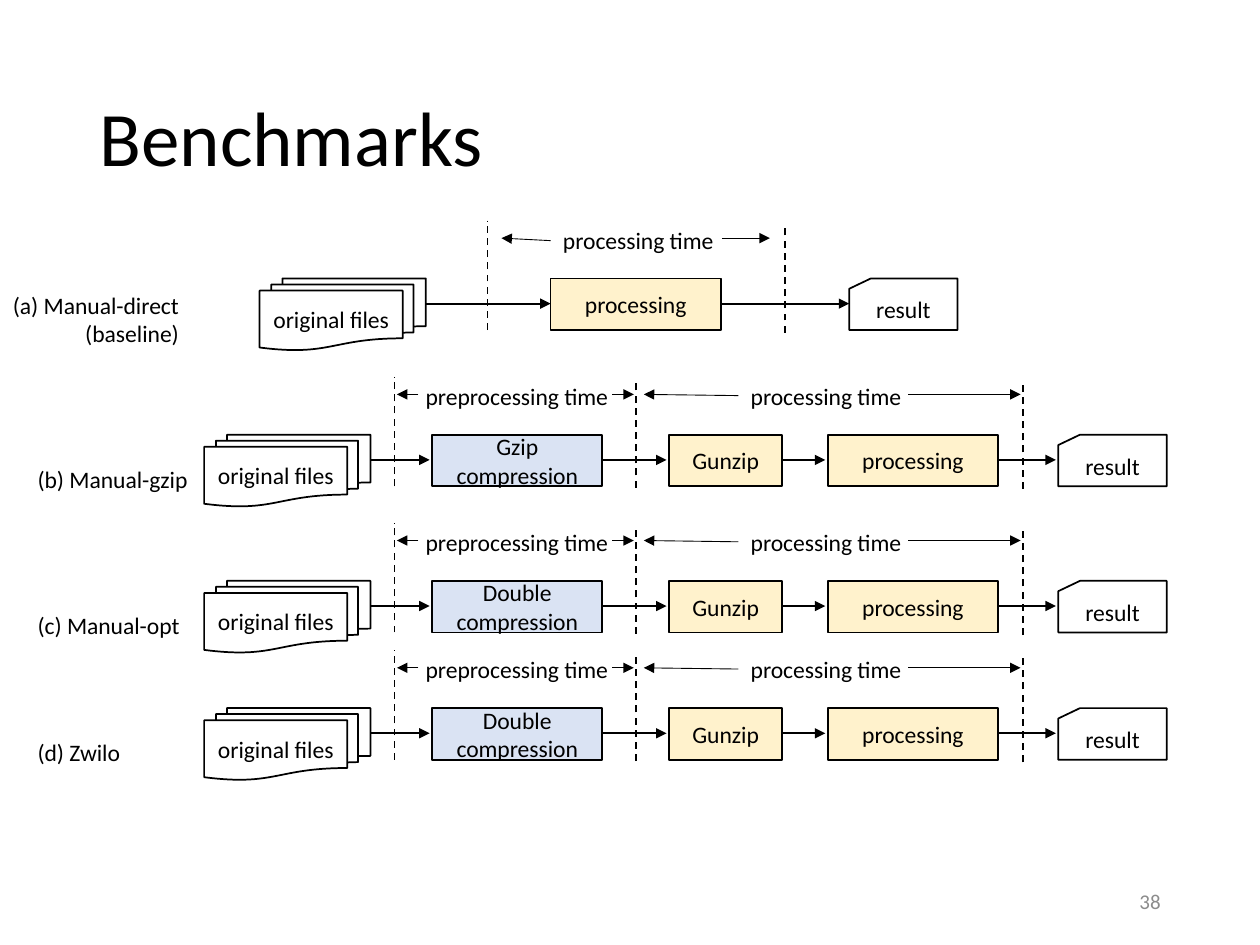
from dataclasses import dataclass

from lxml import etree
from pptx import Presentation
from pptx import util as u
from pptx.dml import color
from pptx.enum import dml, shapes, text
from pptx.oxml import ns

BLACK, WHITE, CREAM, SKY, GREY = "000000", "FFFFFF", "FFF2CC", "DAE3F3", "8C8C8C"
KIND = shapes.MSO_SHAPE
ALIGN = text.PP_ALIGN
MIDDLE = text.MSO_ANCHOR.MIDDLE


@dataclass
class Step:
    kind: KIND
    left: float
    width: float
    label: str
    fill: str = WHITE
    height: float = 0.41


@dataclass
class Span:
    label: str
    label_left: float
    left_arrow: tuple[float, float]
    right_arrow: tuple[float, float]
    slant: float = 0.0


@dataclass
class Border:
    x: float
    rise: float
    drop: float


@dataclass
class Pipeline:
    top: float
    steps: list[Step]
    flows: list[tuple[float, float]]
    spans: list[Span]
    borders: list[Border]


def rgb(value: str) -> color.RGBColor:
    return color.RGBColor.from_string(value)


def apply(target, formats: dict) -> None:
    for key, value in formats.items():
        setattr(target, key, value)


def write(frame, words: str, align=ALIGN.LEFT, size=13.5, ink=BLACK, **frame_formats) -> None:
    apply(frame, {"word_wrap": True, **frame_formats})
    frame.text = words
    for paragraph in frame.paragraphs:
        paragraph.alignment = align
        apply(paragraph.font, {"name": "Calibri", "size": u.Pt(size)})
        paragraph.font.color.rgb = rgb(ink)


def add_label(slide, box: tuple, words: str, **formats) -> None:
    label = slide.shapes.add_textbox(*map(u.Inches, box))
    write(label.text_frame, words, **formats)


def add_line(slide, start: tuple, end: tuple, width=1.0, dashed=False) -> None:
    line = slide.shapes.add_connector(
        shapes.MSO_CONNECTOR.STRAIGHT, *map(u.Inches, start + end))
    line.line.width = u.Pt(width)
    line.line.color.rgb = rgb(BLACK)
    if dashed:
        line.line.dash_style = dml.MSO_LINE.DASH
    else:
        outline = line.line._get_or_add_ln()
        etree.SubElement(outline, ns.qn("a:tailEnd"), type="triangle")
    etree.SubElement(line._element.spPr, ns.qn("a:effectLst"))


def add_step(slide, step: Step, top: float) -> None:
    box = (step.left, top, step.width, step.height)
    shape = slide.shapes.add_shape(step.kind, *map(u.Inches, box))
    shape.shadow.inherit = False
    shape.fill.solid()
    shape.fill.fore_color.rgb = rgb(step.fill)
    shape.line.color.rgb = rgb(BLACK)
    shape.line.width = u.Pt(1)
    write(shape.text_frame, step.label, ALIGN.CENTER, vertical_anchor=MIDDLE)


def add_span(slide, span: Span, top: float) -> None:
    y = top - 0.32
    add_label(slide, (span.label_left, top - 0.47, 1.86, 0.33), span.label)
    start, end = span.left_arrow
    add_line(slide, (start, y + span.slant), (end, y), 0.5)
    start, end = span.right_arrow
    add_line(slide, (start, y), (end, y), 0.5)


def add_pipeline(slide, pipeline: Pipeline) -> None:
    top = pipeline.top
    for start, end in pipeline.flows:
        add_line(slide, (start, top + 0.2), (end, top + 0.2))
    for step in pipeline.steps:
        add_step(slide, step, top)
    for border in pipeline.borders:
        add_line(slide, (border.x, top + border.drop), (border.x, top - border.rise), dashed=True)
    for span in pipeline.spans:
        add_span(slide, span, top)


def files(left: float) -> Step:
    return Step(KIND.FLOWCHART_MULTIDOCUMENT, left, 1.32, "original files", height=0.57)


def processing(left: float) -> Step:
    return Step(KIND.RECTANGLE, left, 1.35, "processing", CREAM)


def result(left: float) -> Step:
    return Step(KIND.FLOWCHART_CARD, left, 0.86, "result")


def compressed(top: float, method: str) -> Pipeline:
    return Pipeline(
        top,
        [files(1.62),
         Step(KIND.RECTANGLE, 3.43, 1.35, f"{method}\ncompression", SKY),
         Step(KIND.RECTANGLE, 5.31, 0.9, "Gunzip", CREAM),
         processing(6.57), result(8.4)],
        [(2.4, 3.41), (4.28, 5.29), (6.04, 6.55), (7.87, 8.38)],
        [Span("preprocessing time", 3.28, (3.32, 3.15), (4.86, 5.03)),
         Span("processing time", 5.86, (5.86, 5.11), (7.21, 8.1), 0.01)],
        [Border(3.13, 0.46, 0.41), Border(5.05, 0.44, 0.42), Border(8.12, 0.43, 0.43)])


def main() -> None:
    deck = Presentation()
    apply(deck, {"slide_width": u.Inches(10), "slide_height": u.Inches(7.5)})
    slide = deck.slides.add_slide(deck.slide_layouts[5])

    title = slide.shapes.title
    apply(title, {"left": u.Inches(0.69), "top": u.Inches(0.4),
                  "width": u.Inches(8.62), "height": u.Inches(1.45)})
    write(title.text_frame, "Benchmarks", size=44, vertical_anchor=MIDDLE)
    title.text_frame.paragraphs[0].line_spacing = 0.9

    direct = Pipeline(
        2.21,
        [files(2.06), processing(4.37), result(6.74)],
        [(3.36, 4.37), (5.73, 6.74)],
        [Span("processing time", 4.37, (4.37, 3.98), (5.73, 6.11), 0.02)],
        [Border(3.87, 0.46, 0.41), Border(6.23, 0.43, 0.43)])
    add_pipeline(slide, direct)
    add_label(slide, (0, 2.26, 1.86, 0.56), "(a) Manual-direct\v(baseline)",
              align=ALIGN.RIGHT, margin_right=u.Inches(0.44))

    benchmarks = [("(b) Manual-gzip", 3.45, "Gzip"),
                  ("(c) Manual-opt", 4.61, "Double"),
                  ("(d) Zwilo", 5.62, "Double")]
    for name, top, method in benchmarks:
        add_pipeline(slide, compressed(top, method))
        add_label(slide, (0.2, top + 0.19, 1.86, 0.33), name)

    add_label(slide, (7.06, 6.95, 2.25, 0.4), "38", align=ALIGN.RIGHT,
              size=12, ink=GREY, vertical_anchor=MIDDLE)
    deck.save("out.pptx")


if __name__ == "__main__":
    main()
